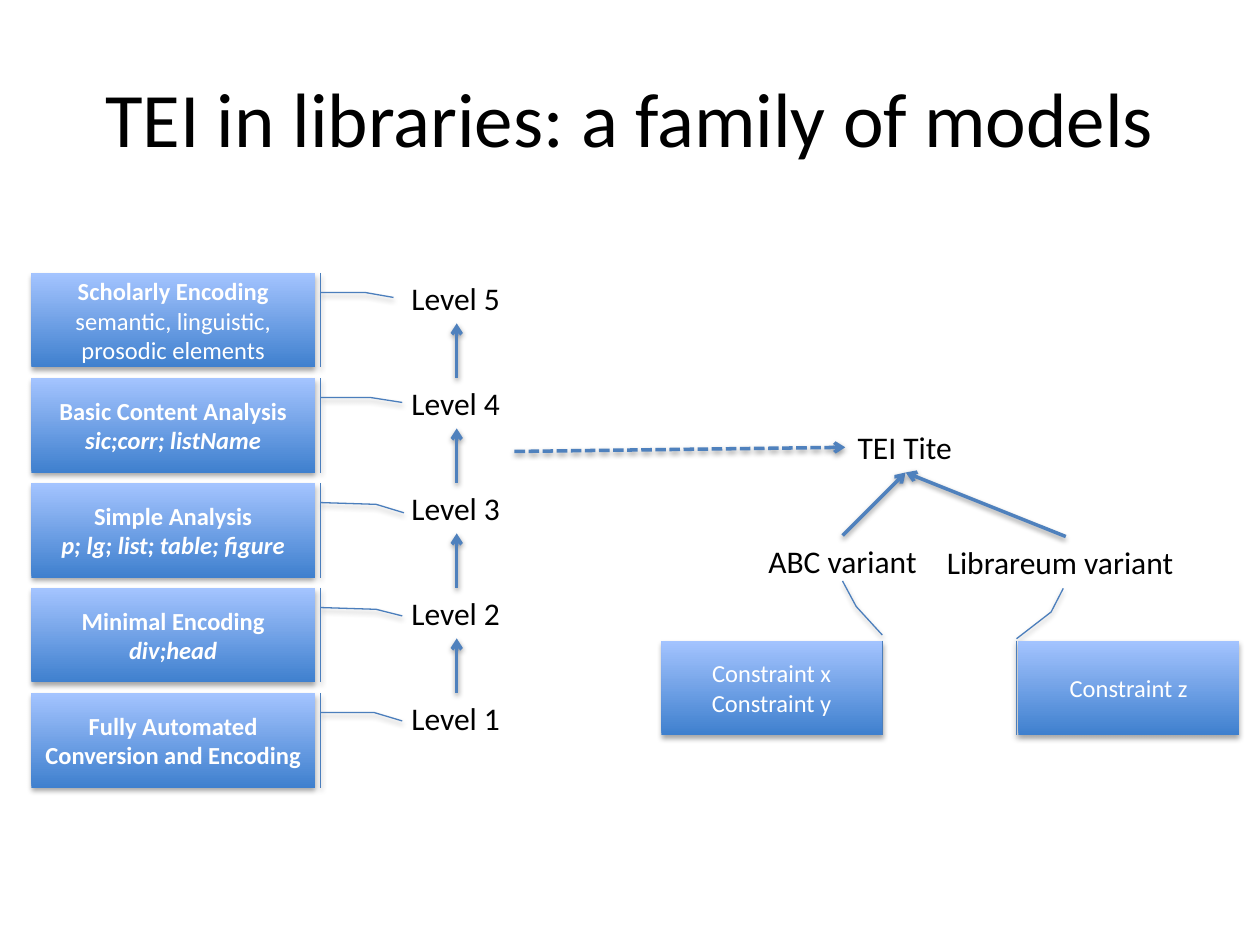
from lxml import etree
from pptx import Presentation, util as u
from pptx.dml.color import RGBColor
from pptx.enum import dml, shapes, text
from pptx.oxml.ns import qn

# Grid: columns and rows of a twelfth of an inch
CELL = u.Inches(1) // 12
COLS, ROWS = 120, 90
FONT = "Calibri"
HEX = {"ink": "000000", "white": "FFFFFF", "deep": "3F80CE",
       "pale": "A4C4FF", "edge": "4B7EBC", "arrow": "4F81BD"}

# Callouts: paragraphs as (words, style), then the leader's adjustments
LEVELS = [
    ("Level 5", [("Scholarly Encoding", "b"),
                 ("semantic, linguistic, prosodic elements", "")],
     (0.207, -0.019, 0.207, -0.178, 0.259, -0.277)),
    ("Level 4", [("Basic Content Analysis", "b"), ("sic;corr; listName", "bi")],
     (0.207, -0.019, 0.207, -0.197, 0.259, -0.308)),
    ("Level 3", [("Simple Analysis", "b"), ("p; lg; list; table; figure", "bi")],
     (0.207, -0.019, 0.226, -0.216, 0.315, -0.314)),
    ("Level 2", [("Minimal Encoding", "b"), ("div;head", "bi")],
     (0.207, -0.019, 0.226, -0.216, 0.296, -0.308)),
    ("Level 1", [("Fully Automated Conversion and Encoding", "b")],
     (0.207, -0.019, 0.207, -0.209, 0.296, -0.308)),
]
# Variants: name, box, callout column, paragraphs, adjustments
VARIANTS = [
    ("ABC variant", (9, 10.8, 16.5, 4.8), 0,
     [("Constraint x", ""), ("Constraint y", "")],
     (-0.058, -0.002, -0.361, 0.117, -0.63, 0.179)),
    ("Librareum variant", (26, 10.9, 25, 4.8), 34, [("Constraint z", "")],
     (-0.019, 1.009, -0.302, 0.852, -0.552, 0.797)),
]


def rgb(name):
    return RGBColor.from_string(HEX[name])


def grid(*nums):
    return [round(n * CELL) for n in nums]


def style(par, size, ink, marks=""):
    font = par.font
    font.name, font.size = FONT, u.Pt(size)
    font.bold, font.italic = "b" in marks, "i" in marks
    font.color.rgb = rgb(ink)


def shade(part, dist, alpha):
    """Give a shape or connector a soft shadow straight below it."""
    props = part.element.spPr
    list_ = etree.SubElement(props, qn("a:effectLst"))
    drop = etree.SubElement(list_, qn("a:outerShdw"), blurRad=str(u.Pt(3.1)),
                            dist=str(u.Pt(dist)), dir="5400000", rotWithShape="0")
    tint = etree.SubElement(drop, qn("a:srgbClr"), val=HEX["ink"])
    etree.SubElement(tint, qn("a:alpha"), val=str(alpha * 1000))


def label(slide, words, box):
    part = slide.shapes.add_textbox(*grid(*box))
    frame = part.text_frame
    frame.word_wrap = False
    frame.auto_size = text.MSO_AUTO_SIZE.SHAPE_TO_FIT_TEXT
    frame.text = words
    style(frame.paragraphs[0], 18, "ink")
    return part


def callout(slide, pars, box, bends):
    part = slide.shapes.add_shape(
        shapes.MSO_SHAPE.LINE_CALLOUT_2_ACCENT_BAR, *grid(*box))
    part.element.spPr.find(qn("a:xfrm")).set("flipH", "1")
    for i, bend in enumerate(bends):
        part.adjustments[i] = bend
    part.fill.gradient()
    part.fill.gradient_angle = 90
    for stop, name in zip(part.fill.gradient_stops, ("deep", "pale")):
        stop.color.rgb = rgb(name)
    part.line.color.rgb = rgb("edge")
    part.line.width = u.Pt(0.75)
    shade(part, 1.8, 35)
    frame = part.text_frame
    frame.word_wrap = True
    frame.vertical_anchor = text.MSO_ANCHOR.MIDDLE
    frame.text = "\n".join(words for words, _ in pars)
    for par, (_, marks) in zip(frame.paragraphs, pars):
        par.alignment = text.PP_ALIGN.CENTER
        style(par, 14, "white", marks)


def arrow(slide, end, side, start=None, at=(0, 0), dash=False):
    """Point at a side of end, from the top of start or from a grid place."""
    x, y = grid(*at)
    part = slide.shapes.add_connector(shapes.MSO_CONNECTOR.STRAIGHT, x, y, x, y)
    if start is not None:
        part.begin_connect(start, 0)
    part.end_connect(end, side)
    part.line.color.rgb = rgb("arrow")
    part.line.width = u.Pt(2)
    if dash:
        part.line.dash_style = dml.MSO_LINE.SQUARE_DOT
    etree.SubElement(part.line._get_or_add_ln(), qn("a:tailEnd"), type="arrow")
    shade(part, 1.6, 38)


def heading(slide, box):
    title = slide.shapes.title
    title.left, title.top, title.width, title.height = grid(*box)
    title.text_frame.text = "TEI in libraries: a family of models"
    title.text_frame.vertical_anchor = text.MSO_ANCHOR.MIDDLE
    par = title.text_frame.paragraphs[0]
    par.alignment = text.PP_ALIGN.CENTER
    style(par, 44, "ink")


def ladder(slide, box):
    """Stack the levels, each pointing up at the next."""
    left, top, width, height = box
    step = height / len(LEVELS)
    above = None
    for i, (name, pars, bends) in enumerate(LEVELS):
        y = top + i * step
        callout(slide, pars, (left, y, 27, 9), bends)
        part = label(slide, name, (left + width - 11, y, 11, 4.8))
        if above is not None:
            arrow(slide, above, 2, start=part)
        above = part


def family(slide, box):
    """Place the model, its variants and their constraints."""
    left, top, width, height = box
    root = label(slide, "TEI Tite", (left + 17.5, top, 11.5, 4.8))
    arrow(slide, root, 1, at=(49, 43), dash=True)
    for name, (x, y, w, h), col, pars, bends in VARIANTS:
        part = label(slide, name, (left + x, top + y, w, h))
        arrow(slide, root, 2, start=part)
        callout(slide, pars, (left + col, top + height - 9, 21, 9), bends)


def main():
    deck = Presentation()
    deck.slide_width, deck.slide_height = grid(COLS, ROWS)
    slide = deck.slides.add_slide(deck.slide_layouts[5])
    heading(slide, (6, 3.6, 108, 15))
    ladder(slide, (3, 26, 46, 50))
    family(slide, (63, 40.2, 55, 29.8))
    deck.save("out.pptx")


if __name__ == "__main__":
    main()
